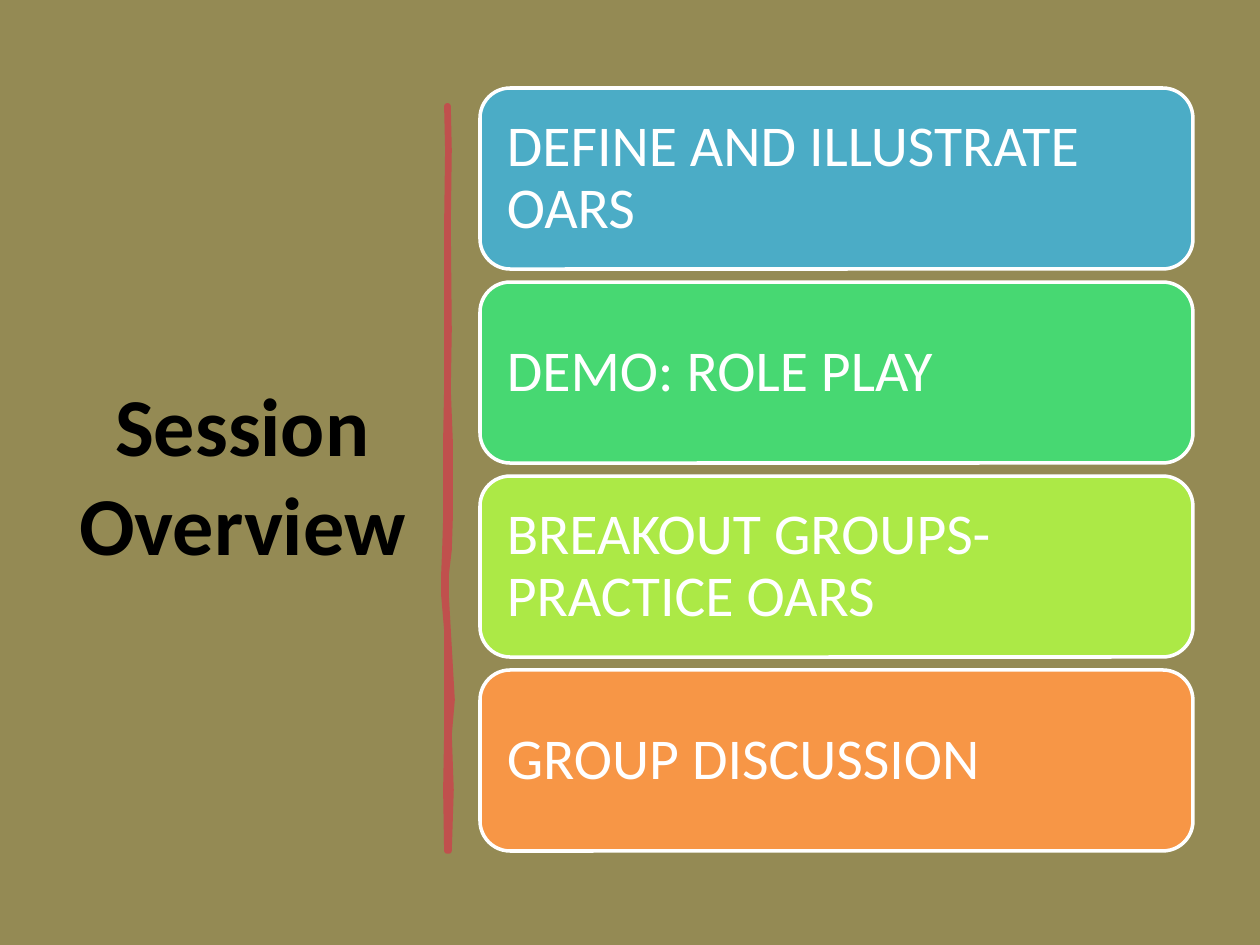
from dataclasses import dataclass

from pptx import Presentation
from pptx.dml.color import RGBColor
from pptx.enum.shapes import MSO_SHAPE
from pptx.enum.text import MSO_ANCHOR, PP_ALIGN
from pptx.util import Emu, Pt

ROUNDED = MSO_SHAPE.ROUNDED_RECTANGLE
MIDDLE = MSO_ANCHOR.MIDDLE
LEFT, CENTER = PP_ALIGN.LEFT, PP_ALIGN.CENTER

EMU_PER_PX = 914400 / 126
FONT = "Calibri"
COLORS = {
    "background": "948A54",
    "title": "000000",
    "divider": "C0504D",
    "white": "FFFFFF",
    "blue": "4BACC6",
    "green": "47D872",
    "lime": "ACE946",
    "orange": "F79646",
}

CARD_LEFT, CARD_TOP = 480, 88
CARD_WIDTH, CARD_HEIGHT, CARD_PITCH = 713, 181, 194
CARD_INSET = 18


@dataclass
class Card:
    text: str
    color: str


@dataclass
class Stroke:
    """Left and right edge of the divider at one height."""
    y: int
    left: int
    right: int


CARDS = [
    Card("DEFINE AND ILLUSTRATE OARS", "blue"),
    Card("DEMO: ROLE PLAY", "green"),
    Card("BREAKOUT GROUPS- PRACTICE OARS", "lime"),
    Card("GROUP DISCUSSION", "orange"),
]

DIVIDER = [
    Stroke(106, 447, 448), Stroke(150, 448, 449), Stroke(225, 447, 448),
    Stroke(330, 447, 449), Stroke(390, 447, 448), Stroke(440, 446, 450),
    Stroke(520, 446, 450), Stroke(550, 445, 449), Stroke(575, 444, 446),
    Stroke(595, 444, 446), Stroke(630, 447, 448), Stroke(700, 447, 452),
    Stroke(735, 447, 449), Stroke(790, 446, 451), Stroke(851, 447, 449),
]


def px(length: int) -> Emu:
    return Emu(round(length * EMU_PER_PX))


def color(name: str) -> RGBColor:
    return RGBColor.from_string(COLORS[name])


def paint(shape, fill: str, line: str, width: float) -> None:
    shape.shadow.inherit = False
    shape.fill.solid()
    shape.fill.fore_color.rgb = color(fill)
    shape.line.color.rgb = color(line)
    shape.line.width = Pt(width)


def write(shape, text: str, size: int, ink: str, align, bold: bool = False):
    frame = shape.text_frame
    frame.word_wrap = True
    frame.vertical_anchor = MIDDLE
    frame.text = text
    paragraph = frame.paragraphs[0]
    paragraph.alignment = align
    font = paragraph.runs[0].font
    font.name, font.size, font.bold = FONT, Pt(size), bold
    font.color.rgb = color(ink)
    return frame


def draw_title(page) -> None:
    box = page.shapes.add_textbox(px(66), px(88), px(353), px(770))
    write(box, "Session Overview", 47, "title", CENTER, bold=True)


def draw_divider(page) -> None:
    """Draw the hand-drawn line down its left edge and back up its right."""
    points = [(stroke.left, stroke.y) for stroke in DIVIDER]
    points += [(stroke.right, stroke.y) for stroke in reversed(DIVIDER)]
    builder = page.shapes.build_freeform(*points[0], scale=EMU_PER_PX)
    builder.add_line_segments(points[1:], close=True)
    paint(builder.convert_to_shape(), "divider", "divider", 3.25)


def draw_card(page, card: Card, row: int) -> None:
    shape = page.shapes.add_shape(
        ROUNDED, px(CARD_LEFT), px(CARD_TOP + row * CARD_PITCH),
        px(CARD_WIDTH), px(CARD_HEIGHT))
    paint(shape, card.color, "white", 2)
    frame = write(shape, card.text, 33, "white", LEFT)
    frame.margin_left = frame.margin_right = px(CARD_INSET)
    frame.margin_top = frame.margin_bottom = px(CARD_INSET)
    frame.paragraphs[0].line_spacing = 0.9


def main() -> None:
    deck = Presentation()
    deck.slide_width, deck.slide_height = px(1260), px(945)
    page = deck.slides.add_slide(deck.slide_layouts[6])
    page.background.fill.solid()
    page.background.fill.fore_color.rgb = color("background")
    draw_title(page)
    draw_divider(page)
    for row, card in enumerate(CARDS):
        draw_card(page, card, row)
    deck.save("out.pptx")


if __name__ == "__main__":
    main()
